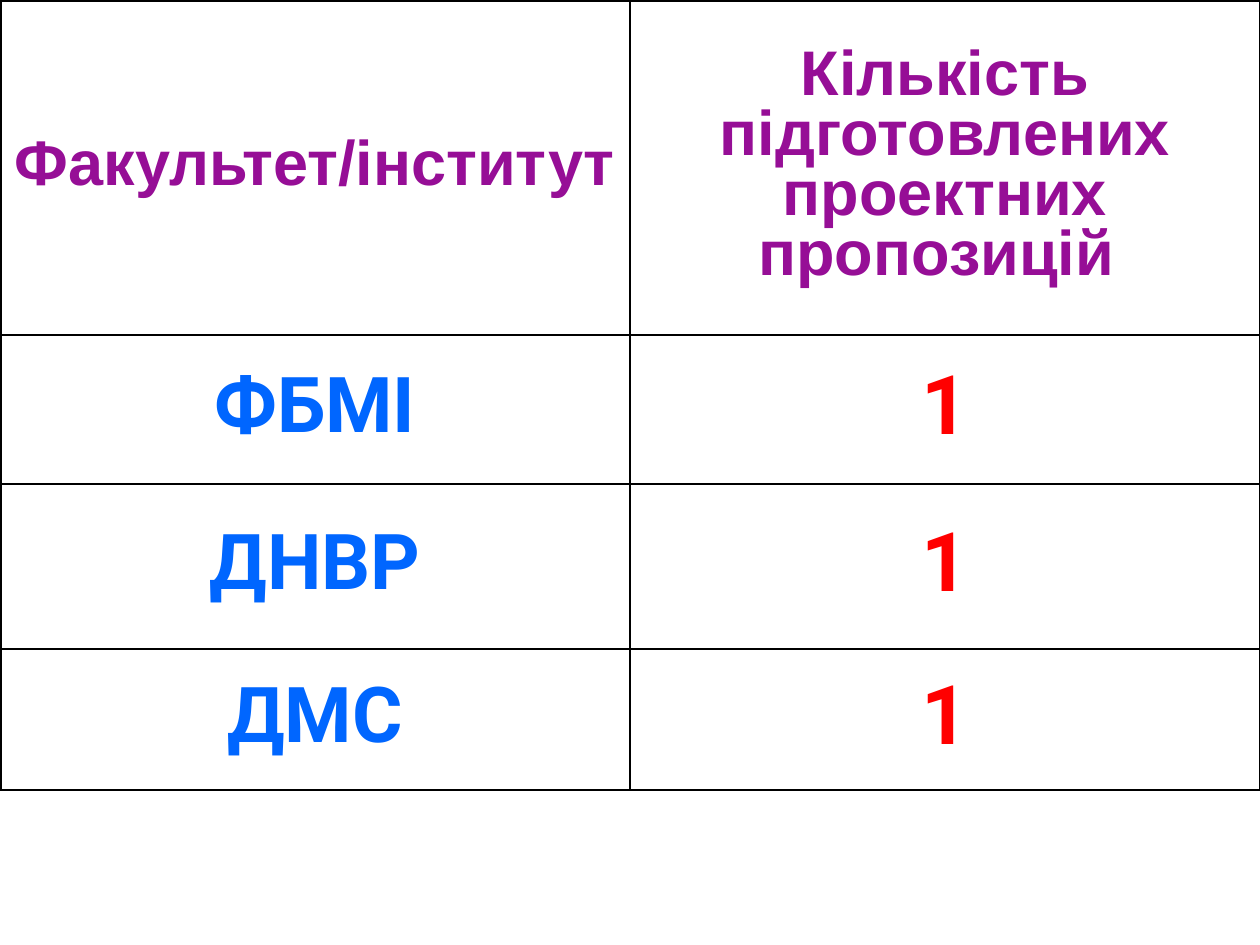
import pptx
import pptx.dml.color
import pptx.enum.text
import pptx.oxml.ns
import pptx.util
from lxml import etree

EMU_PER_PX = 914400 / 126
SLIDE_WIDTH, SLIDE_HEIGHT = 1260, 945
ROW_HEIGHTS = [335, 149, 165, 141]
PURPLE, BLUE, RED, BLACK = "960E96", "0066FF", "FF0000", "000000"

HEADERS = ["Факультет/інститут", "Кількість підготовлених проектних пропозицій "]
PROPOSALS = [("ФБМІ", "1"), ("ДНВР", "1"), ("ДМС", "1")]


def px(length):
    return pptx.util.Emu(round(length * EMU_PER_PX))


def color(hex_string):
    return pptx.dml.color.RGBColor.from_string(hex_string)


def set_borders(cell, **widths):
    """Draw black cell edges; widths in points are keyed L, R, T, B."""
    properties = cell._tc.get_or_add_tcPr()
    qn = pptx.oxml.ns.qn
    for side, width in widths.items():
        line = etree.SubElement(properties, qn(f"a:ln{side}"), w=str(pptx.util.Pt(width)))
        fill = etree.SubElement(line, qn("a:solidFill"))
        etree.SubElement(fill, qn("a:srgbClr"), val=BLACK)


def write_cell(cell, text, font_name, size, hex_color, space_before=0):
    cell.text = text
    cell.vertical_anchor = pptx.enum.text.MSO_ANCHOR.MIDDLE
    cell.margin_left = cell.margin_right = px(11)
    cell.margin_top = cell.margin_bottom = px(6)
    paragraph = cell.text_frame.paragraphs[0]
    paragraph.alignment = pptx.enum.text.PP_ALIGN.CENTER
    paragraph.line_spacing = 0.85
    paragraph.space_before = pptx.util.Pt(space_before)
    font = paragraph.font
    font.name = font_name
    font.size = pptx.util.Pt(size)
    font.bold = True
    font.color.rgb = color(hex_color)


def add_proposal_table(slide):
    table = slide.shapes.add_table(
        len(ROW_HEIGHTS), len(HEADERS), 0, 0, px(SLIDE_WIDTH), px(sum(ROW_HEIGHTS))
    ).table
    table.first_row = table.horz_banding = False
    for row, height in zip(table.rows, ROW_HEIGHTS):
        row.height = px(height)

    for column, header in enumerate(HEADERS):
        write_cell(table.cell(0, column), header, "Arial", 36, PURPLE, space_before=7.2)
    for row, (faculty, count) in enumerate(PROPOSALS, start=1):
        write_cell(table.cell(row, 0), faculty, "Roboto", 44, BLUE)
        write_cell(table.cell(row, 1), count, "Roboto", 47, RED)

    for row in range(len(ROW_HEIGHTS)):
        for column in range(len(HEADERS)):
            cell = table.cell(row, column)
            set_borders(cell, L=1 if column else 2.25, R=1, T=1 if row else 2.25, B=1)
            cell.fill.background()


def main():
    presentation = pptx.Presentation()
    presentation.slide_width = px(SLIDE_WIDTH)
    presentation.slide_height = px(SLIDE_HEIGHT)
    slide = presentation.slides.add_slide(presentation.slide_layouts[6])
    add_proposal_table(slide)
    presentation.save("out.pptx")


if __name__ == "__main__":
    main()
